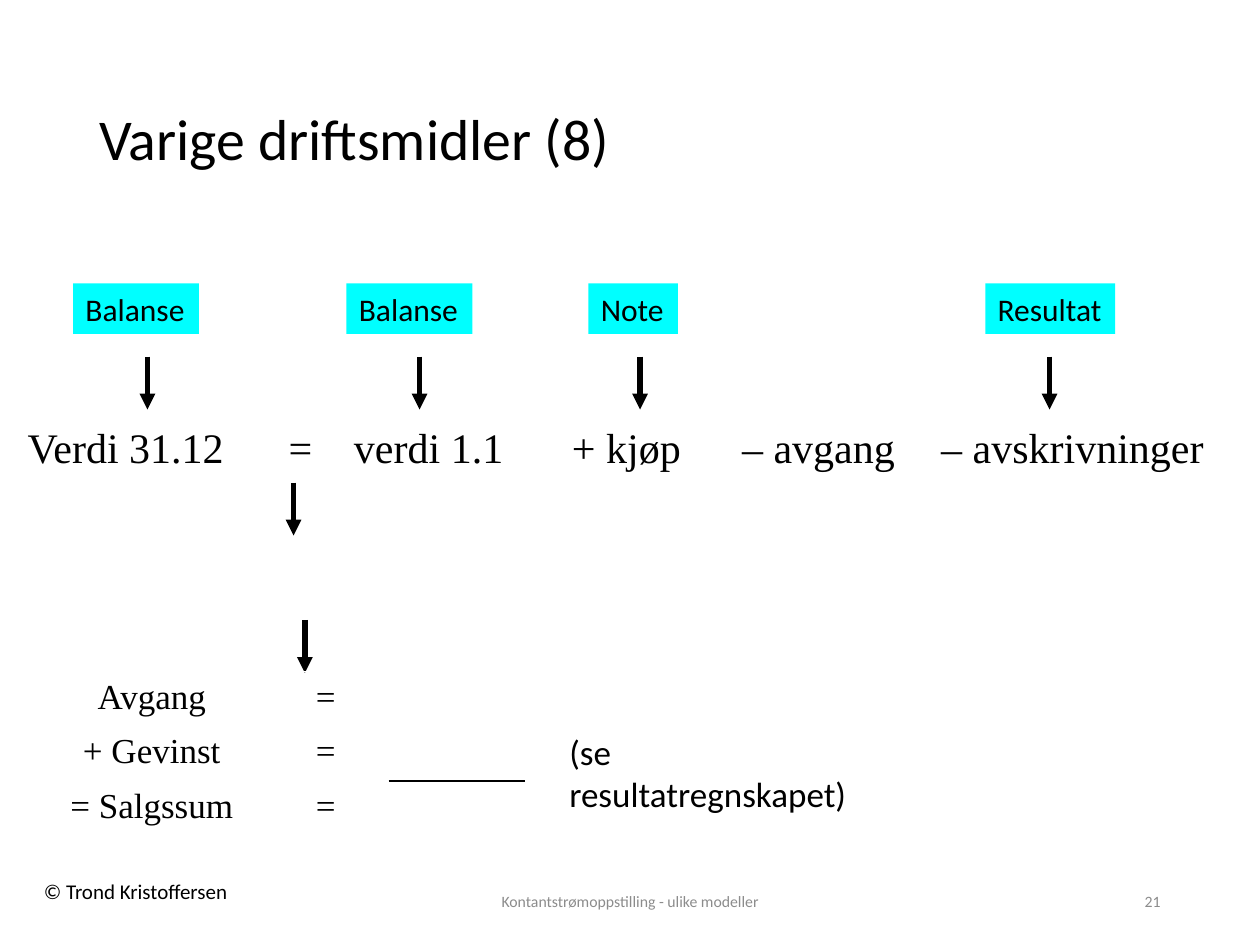
from lxml import etree
from pptx import Presentation
from pptx.dml.color import RGBColor
from pptx.enum.shapes import MSO_CONNECTOR as CONNECTOR, MSO_SHAPE as SHAPE
from pptx.enum.text import MSO_ANCHOR as ANCHOR, PP_ALIGN as ALIGN
from pptx.oxml.ns import qn
from pptx.util import Inches, Pt

BLACK, GREY, CYAN = "000000", "8C8C8C", "00FFFF"
SANS, SERIF = "Calibri", "Times New Roman"


def color(hex_value):
    return RGBColor.from_string(hex_value)


def write(frame, text, size, font=SANS, hex_value=BLACK, align=ALIGN.LEFT):
    paragraph = frame.paragraphs[0]
    paragraph.alignment = align
    run = paragraph.add_run()
    run.text = text
    run.font.size = Pt(size)
    run.font.name = font
    run.font.color.rgb = color(hex_value)
    return paragraph


def add_text(slide, box, text, size, wrap=True, anchor=ANCHOR.TOP, **style):
    frame = slide.shapes.add_textbox(*map(Inches, box)).text_frame
    frame.word_wrap = wrap
    frame.vertical_anchor = anchor
    return write(frame, text, size, **style)


def add_label(slide, box, text):
    label = slide.shapes.add_shape(SHAPE.RECTANGLE, *map(Inches, box))
    label.shadow.inherit = False
    label.fill.solid()
    label.fill.fore_color.rgb = color(CYAN)
    label.line.fill.background()
    label.text_frame.word_wrap = False
    label.text_frame.vertical_anchor = ANCHOR.TOP
    write(label.text_frame, text, 18)


def add_down_arrow(slide, x, top, length=0.42):
    arrow = slide.shapes.add_connector(
        CONNECTOR.STRAIGHT, Inches(x), Inches(top), Inches(x), Inches(top + length))
    arrow.line.width = Pt(3)
    arrow.line.color.rgb = color(BLACK)
    etree.SubElement(arrow.line._get_or_add_ln(), qn("a:tailEnd"), type="triangle")
    etree.SubElement(arrow._element.spPr, qn("a:effectLst"))


def add_plain_table(slide, left, top, widths, row_height, rows, size, align):
    """Add a table without fills or banding; empty strings leave cells empty."""
    table = slide.shapes.add_table(
        len(rows), len(widths), Inches(left), Inches(top),
        Inches(sum(widths)), Inches(row_height * len(rows))).table
    table.first_row = table.horz_banding = False
    for column, width in zip(table.columns, widths):
        column.width = Inches(width)
    for row_index, row in enumerate(rows):
        for column_index, text in enumerate(row):
            cell = table.cell(row_index, column_index)
            cell.fill.background()
            if text:
                write(cell.text_frame, text, size, SERIF, align=align)
    return table


def add_border(cell, side):
    """Draw a thin black border; side is "T" or "B"."""
    border = etree.Element(qn(f"a:ln{side}"), w=str(Pt(1)))
    fill = etree.SubElement(border, qn("a:solidFill"))
    etree.SubElement(fill, qn("a:srgbClr"), val=BLACK)
    cell._tc.get_or_add_tcPr().insert(0, border)


def add_value_equation(slide, left, top):
    terms = ["Verdi 31.12", "=", "verdi 1.1", "+ kjøp", "– avgang", "– avskrivninger"]
    add_plain_table(slide, left, top, [2.07, 0.52, 1.73, 1.35, 1.58, 2.33],
                    0.47, [terms], 24, ALIGN.LEFT)
    sources = [("Balanse", 0.58, 1, 1.17), ("Balanse", 2.75, 1, 3.33),
               ("Note", 4.67, 0.71, 5.08), ("Resultat", 7.82, 1.03, 8.33)]
    for text, label_left, width, arrow_x in sources:
        add_label(slide, (label_left, top - 1.08, width, 0.4), text)
        add_down_arrow(slide, arrow_x, top - 0.5)


def add_sale_calculation(slide, left, top):
    rows = [(text, "=", "") for text in ("Avgang", "+ Gevinst", "= Salgssum")]
    table = add_plain_table(slide, left, top, [1.75, 1.01, 1.07],
                            0.41, rows, 20, ALIGN.CENTER)
    add_border(table.cell(1, 2), "B")
    add_border(table.cell(2, 2), "T")
    add_text(slide, (left + 4.09, top + 0.42, 2.73, 0.75), "(se resultatregnskapet)", 20)


def add_footer(slide, top):
    add_text(slide, (0.25, top - 0.03, 1.7, 0.3), "© Trond Kristoffersen", 12, wrap=False)
    small = dict(size=9, anchor=ANCHOR.MIDDLE, hex_value=GREY)
    add_text(slide, (3.31, top, 3.38, 0.4), "Kontantstrømoppstilling - ulike modeller",
             align=ALIGN.CENTER, **small)
    add_text(slide, (7.06, top, 2.25, 0.4), "21", align=ALIGN.RIGHT, **small)


def main():
    presentation = Presentation()
    presentation.slide_width, presentation.slide_height = Inches(10), Inches(7.5)
    slide = presentation.slides.add_slide(presentation.slide_layouts[6])
    title = add_text(slide, (0.69, 0.4, 8.62, 1.45), "Varige driftsmidler (8)", 33,
                     anchor=ANCHOR.MIDDLE)
    title.line_spacing = 0.9
    add_value_equation(slide, 0.12, 3.33)
    add_down_arrow(slide, 2.33, 3.83)
    add_down_arrow(slide, 2.42, 4.92)
    add_sale_calculation(slide, 0.33, 5.33)
    add_footer(slide, 6.95)
    presentation.save("out.pptx")


if __name__ == "__main__":
    main()
